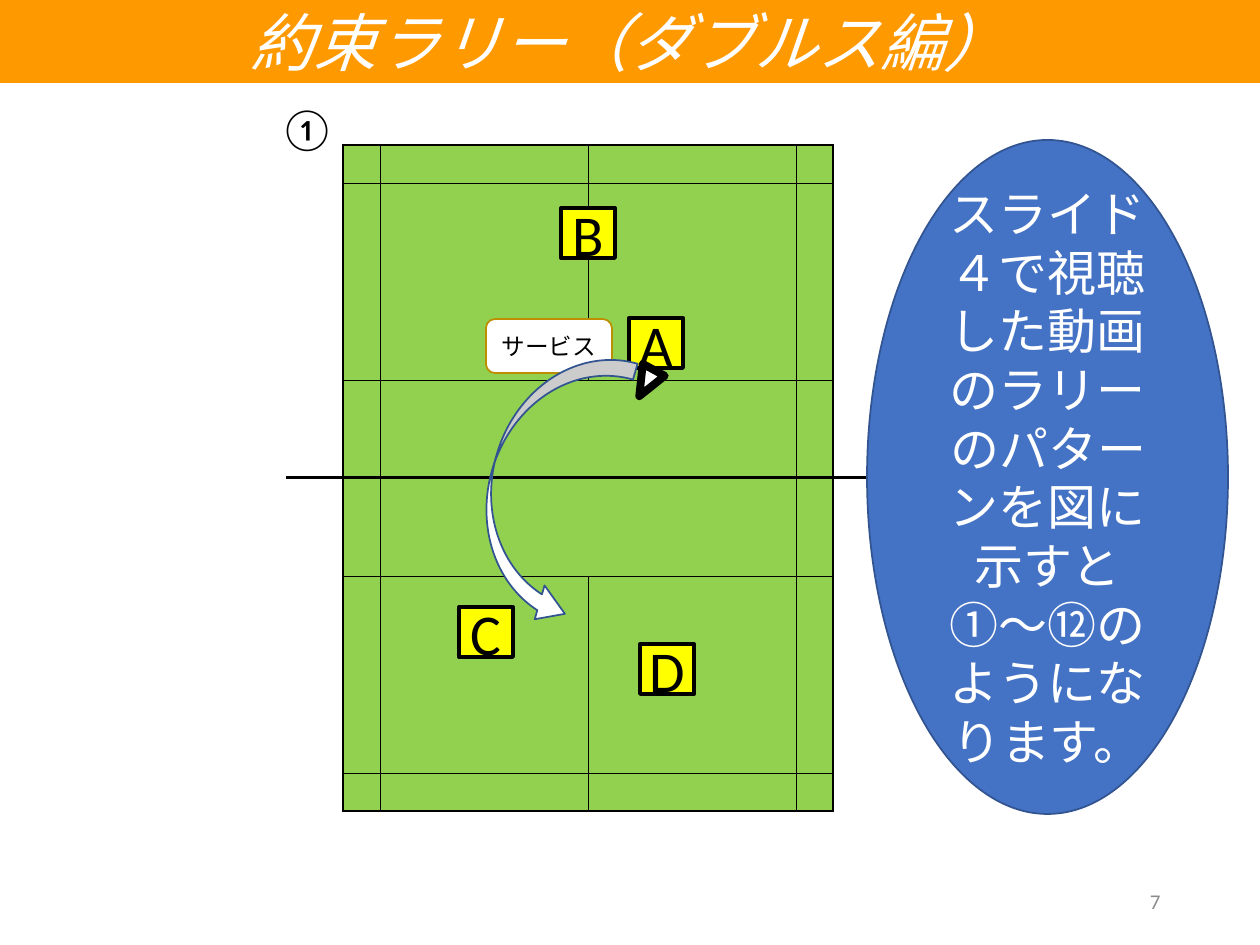
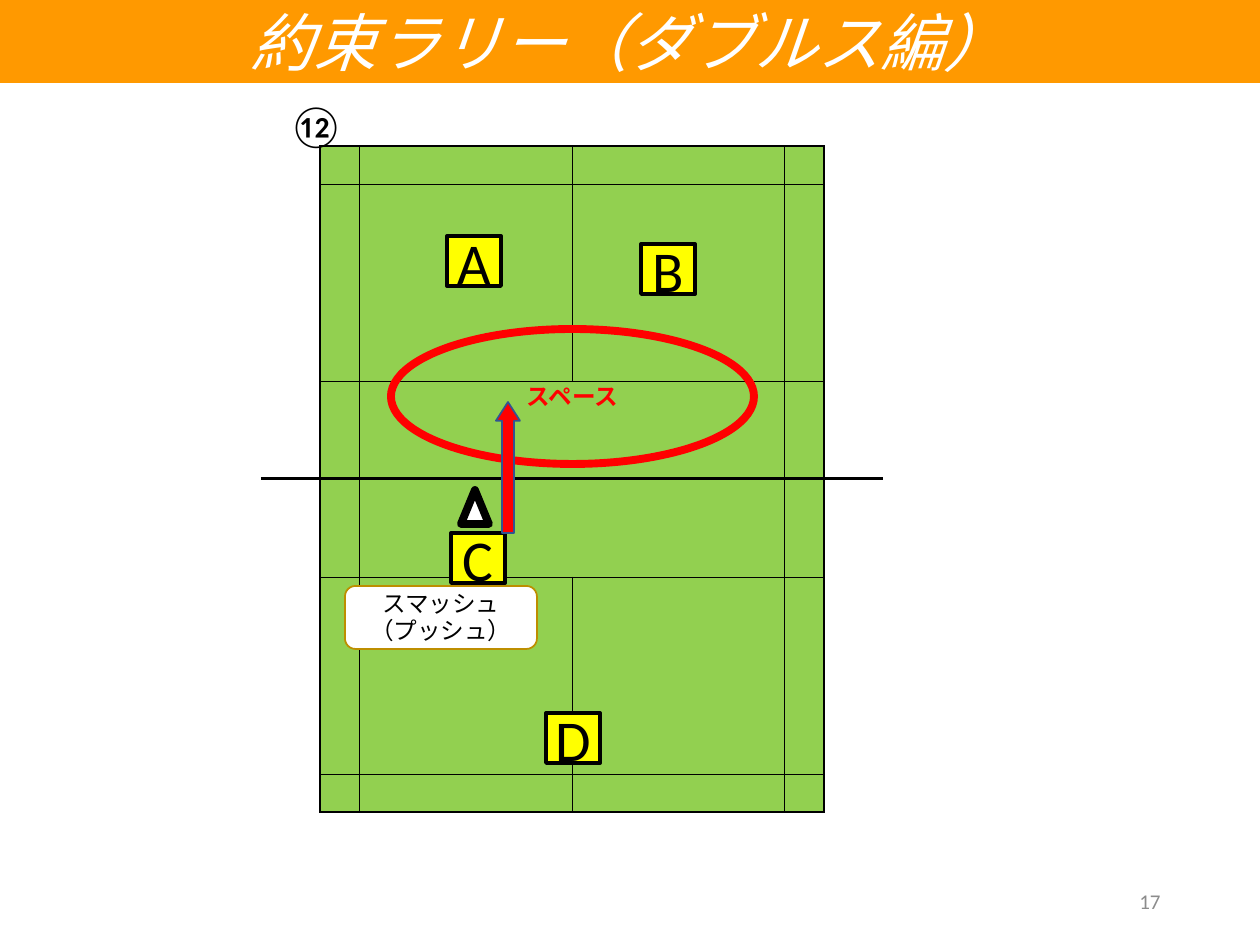
from lxml.etree import SubElement
from pptx import Presentation
from pptx.dml.color import RGBColor
from pptx.enum.shapes import MSO_SHAPE as Shape
from pptx.enum.text import MSO_ANCHOR as Anchor, PP_ALIGN as Align
from pptx.oxml.ns import qn
from pptx.util import Emu, Pt

BLACK = RGBColor(0x00, 0x00, 0x00)
WHITE = RGBColor(0xFF, 0xFF, 0xFF)
ORANGE = RGBColor(0xFF, 0x99, 0x00)
COURT_GREEN = RGBColor(0x92, 0xD0, 0x50)
YELLOW = RGBColor(0xFF, 0xFF, 0x00)
RED = RGBColor(0xFF, 0x00, 0x00)
BLUE = RGBColor(0x44, 0x72, 0xC4)
NAVY = RGBColor(0x32, 0x54, 0x91)
GOLD = RGBColor(0xBD, 0x8E, 0x00)
GREY = RGBColor(0x8C, 0x8C, 0x8C)

LATIN = "Calibri"
JAPANESE = "Noto Sans CJK JP"
EMU_PER_PX = 914400 / 126

TITLE = "約束ラリー（ダブルス編）"
HALF_ROWS = (38, 197, 98)
NET = 3
COURT_EDGES = (1, 5)
MERGED_ROWS = (2, 3)
PLAYER_SIZE = (54, 50)

RALLIES = [
    {
        "number": "7",
        "step": "①", "step_at": (267, 96),
        "court_at": (286, 145), "half_columns": (57, 37, 208),
        "players": {"A": (629, 318), "B": (561, 208), "D": (640, 644), "C": (459, 607)},
        "marks": [
            {"kind": Shape.OVAL, "at": (867, 140, 361, 674), "fill": BLUE, "line": NAVY,
             "text": "スライド４で視聴した動画のラリーのパターンを図に示すと①～⑫のようになります。",
             "style": {"size": 28, "color": WHITE, "name": JAPANESE, "leading": 33.5}},
            {"kind": Shape.ROUNDED_RECTANGLE, "at": (486, 319, 126, 54), "fill": WHITE,
             "line": GOLD, "text": "サービス", "style": {"size": 13.5}},
            {"kind": Shape.CURVED_RIGHT_ARROW, "at": (491, 343, 110, 278), "fill": WHITE,
             "line": NAVY, "turn": 16.2, "adjust": (0.15, 0.32, 0.25)},
            {"kind": Shape.ISOSCELES_TRIANGLE, "at": (634, 368, 25, 30), "fill": WHITE,
             "line": BLACK, "weight": 4.5, "turn": 208.8},
        ],
    },
    {
        "number": "17",
        "step": "⑫", "step_at": (276, 93),
        "court_at": (261, 146), "half_columns": (59, 39, 213),
        "players": {"A": (447, 236), "B": (641, 244), "D": (546, 713), "C": (451, 533)},
        "marks": [
            {"kind": Shape.OVAL, "at": (391, 329, 363, 135), "line": RED, "weight": 4.5,
             "text": "スペース", "style": {"size": 13.5, "color": RED, "bold": True}},
            {"kind": Shape.ROUNDED_RECTANGLE, "at": (345, 586, 192, 63), "fill": WHITE,
             "line": GOLD, "text": "スマッシュ（プッシュ）",
             "style": {"size": 13.5, "leading": 15.5}},
            {"kind": Shape.UP_ARROW, "at": (496, 402, 24, 131), "fill": RED,
             "line": NAVY, "adjust": (0.5, 0.78)},
            {"kind": Shape.ISOSCELES_TRIANGLE, "at": (461, 490, 28, 34), "fill": WHITE,
             "line": BLACK, "weight": 4.5},
        ],
    },
]


def px(*lengths):
    return [Emu(round(length * EMU_PER_PX)) for length in lengths]


def write(shape, text, size, color=BLACK, name=LATIN, align=Align.CENTER,
          bold=False, italic=False, leading=None):
    para = shape.text_frame.paragraphs[0]
    span = para.add_run()
    span.text = text
    para.alignment = align
    if leading:
        para.line_spacing = Pt(leading)
    font = para.font
    font.size, font.name = Pt(size), name
    font.bold, font.italic = bold, italic
    font.color.rgb = color
    if name == JAPANESE:
        SubElement(font._element, qn("a:ea"), typeface=name)


def set_margins(shape, across, down):
    frame = shape.text_frame
    frame.margin_left = frame.margin_right = across
    frame.margin_top = frame.margin_bottom = down


def add_mark(page, kind, at, fill=None, line=None, weight=1, turn=0, adjust=(),
             text=None, style=None):
    mark = page.shapes.add_shape(kind, *px(*at))
    mark.shadow.inherit = False
    mark.rotation = turn
    for index, value in enumerate(adjust):
        mark.adjustments[index] = value
    if fill is None:
        mark.fill.background()
    else:
        mark.fill.solid()
        mark.fill.fore_color.rgb = fill
    if line is None:
        mark.line.fill.background()
    else:
        mark.line.color.rgb = line
        mark.line.width = Pt(weight)
    mark.text_frame.vertical_anchor = Anchor.MIDDLE
    if text:
        write(mark, text, **style)
    return mark


def add_text(page, at, text, anchor, **style):
    box = page.shapes.add_textbox(*px(*at))
    box.text_frame.word_wrap = True
    box.text_frame.vertical_anchor = anchor
    write(box, text, **style)


def upright_weight(index):
    if index in (0, 6):
        return 0
    return 1 if index in COURT_EDGES else 0.5


def level_weight(index, in_court):
    if index == NET:
        return 2
    if not in_court:
        return 0
    return 1 if index in (0, 6) else 0.5


def add_border(cell, side, weight):
    properties = cell._tc.get_or_add_tcPr()
    border = SubElement(properties, qn(f"a:ln{side}"), w=str(Pt(weight)))
    if weight:
        fill = SubElement(border, qn("a:solidFill"))
        SubElement(fill, qn("a:srgbClr"), val=str(BLACK))
    else:
        SubElement(border, qn("a:noFill"))


def add_court(page, at, half_columns):
    columns = half_columns + half_columns[::-1]
    rows = HALF_ROWS + HALF_ROWS[::-1]
    frame = page.shapes.add_table(len(rows), len(columns),
                                  *px(*at, sum(columns), sum(rows)))
    court = frame.table
    court.first_row = court.horz_banding = False
    for column, width in zip(court.columns, px(*columns)):
        column.width = width
    for row, height in zip(court.rows, px(*rows)):
        row.height = height
    for row in MERGED_ROWS:
        court.cell(row, 2).merge(court.cell(row, 3))
    for row in range(len(rows)):
        for column in range(len(columns)):
            cell = court.cell(row, column)
            in_court = 0 < column < len(columns) - 1
            cell.margin_top = cell.margin_bottom = 0
            SubElement(cell.text_frame.paragraphs[0]._p, qn("a:endParaRPr"), sz="600")
            if not cell.is_spanned:
                add_border(cell, "L", upright_weight(column))
                add_border(cell, "R", upright_weight(column + 1))
                add_border(cell, "T", level_weight(row, in_court))
                add_border(cell, "B", level_weight(row + 1, in_court))
            if in_court:
                cell.fill.solid()
                cell.fill.fore_color.rgb = COURT_GREEN
            else:
                cell.fill.background()


def add_banner(page):
    banner = add_mark(page, Shape.RECTANGLE, (-2, 0, 1262, 83), ORANGE, text=TITLE,
                      style={"size": 36, "color": WHITE, "name": JAPANESE, "italic": True})
    banner.text_frame.word_wrap = False
    set_margins(banner, *px(9, 5))


def add_rally(deck, rally):
    page = deck.slides.add_slide(deck.slide_layouts[6])
    add_banner(page)
    add_court(page, rally["court_at"], rally["half_columns"])
    for player, at in rally["players"].items():
        badge = add_mark(page, Shape.RECTANGLE, at + PLAYER_SIZE, YELLOW, BLACK, 2.25,
                         text=player, style={"size": 33})
        set_margins(badge, 0, 0)
    for mark in rally["marks"]:
        add_mark(page, **mark)
    add_text(page, (890, 876, 283, 50), rally["number"], Anchor.MIDDLE,
             size=12, color=GREY, align=Align.RIGHT)
    add_text(page, rally["step_at"] + (69, 63), rally["step"], Anchor.TOP,
             size=24, align=Align.LEFT)


def main():
    deck = Presentation()
    deck.slide_width, deck.slide_height = px(1260, 945)
    for rally in RALLIES:
        add_rally(deck, rally)
    deck.save("out.pptx")


if __name__ == "__main__":
    main()
